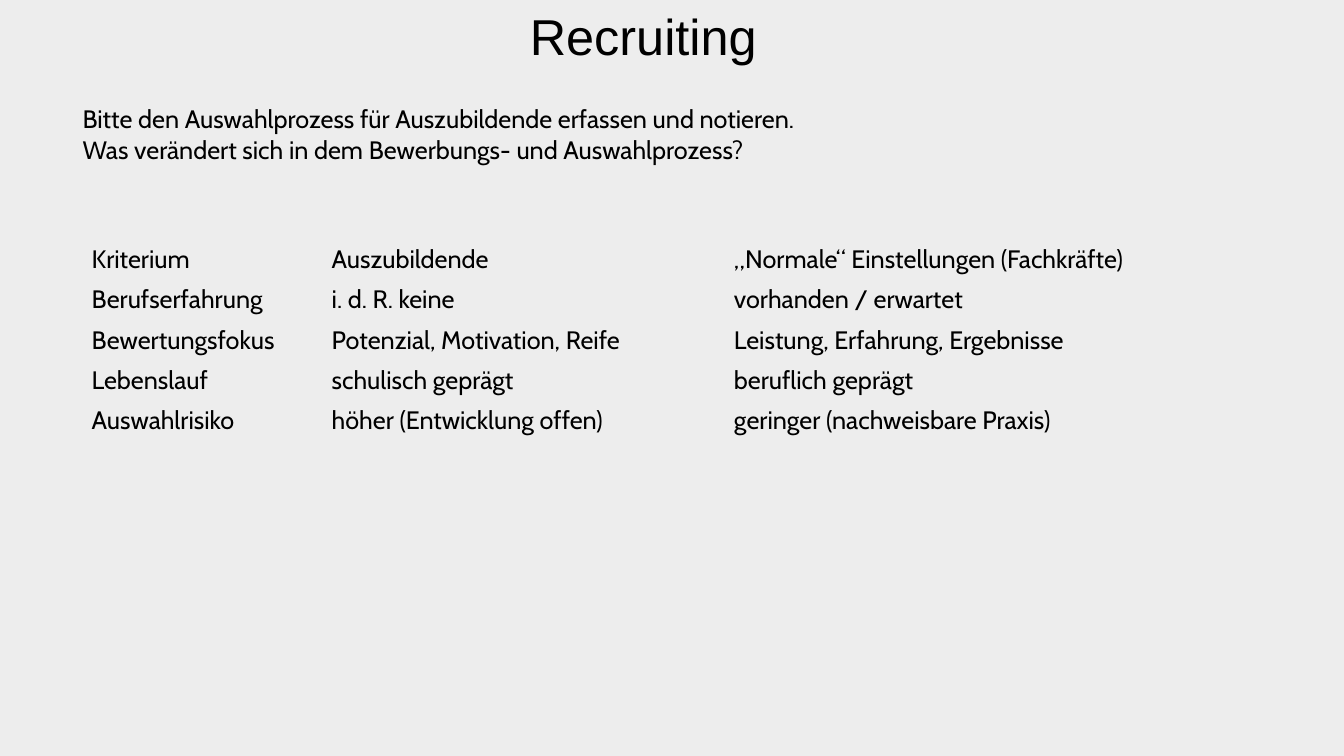
import pptx
import pptx.dml.color
import pptx.enum.text
import pptx.util

Inches = pptx.util.Inches
NO_STYLE_NO_GRID = "{2D5ABB26-0587-4C30-8999-92F81FD0307C}"
BACKGROUND, INK = "EDEDED", "000000"

QUESTIONS = [
    "Bitte den Auswahlprozess für Auszubildende erfassen und notieren.",
    "Was verändert sich in dem Bewerbungs- und Auswahlprozess?",
]
CRITERIA = [
    ("Kriterium", "Auszubildende", "„Normale“ Einstellungen (Fachkräfte)"),
    ("Berufserfahrung", "i. d. R. keine", "vorhanden / erwartet"),
    ("Bewertungsfokus", "Potenzial, Motivation, Reife", "Leistung, Erfahrung, Ergebnisse"),
    ("Lebenslauf", "schulisch geprägt", "beruflich geprägt"),
    ("Auswahlrisiko", "höher (Entwicklung offen)", "geringer (nachweisbare Praxis)"),
]


def rgb(value):
    return pptx.dml.color.RGBColor.from_string(value)


def add_run(p, text, size=18, font="Cabin"):
    r = p.add_run()
    r.text = text
    r.font.size = pptx.util.Pt(size)
    r.font.name = font
    r.font.color.rgb = rgb(INK)


def add_text(s, box, lines, align=pptx.enum.text.PP_ALIGN.LEFT, **style):
    tf = s.shapes.add_textbox(*map(Inches, box)).text_frame
    tf.word_wrap = True
    tf.auto_size = pptx.enum.text.MSO_AUTO_SIZE.SHAPE_TO_FIT_TEXT
    for i, line in enumerate(lines):
        p = tf.add_paragraph() if i else tf.paragraphs[0]
        p.alignment = align
        add_run(p, line, **style)


def add_comparison(s, box, rows, col_widths):
    frame = s.shapes.add_table(len(rows), len(col_widths), *map(Inches, box))
    table = frame.table
    table.first_row = table.horz_banding = False
    # Plain table without grid lines
    table._tbl.tblPr.find(pptx.oxml.ns.qn("a:tableStyleId")).text = NO_STYLE_NO_GRID
    for col, width in zip(table.columns, col_widths):
        col.width = Inches(width)
    for i, row in enumerate(rows):
        for j, text in enumerate(row):
            cell = table.cell(i, j)
            cell.fill.background()
            cell.vertical_anchor = pptx.enum.text.MSO_ANCHOR.MIDDLE
            add_run(cell.text_frame.paragraphs[0], text)


def main():
    prs = pptx.Presentation()
    prs.slide_width, prs.slide_height = Inches(13.33), Inches(7.5)
    s = prs.slides.add_slide(prs.slide_layouts[6])
    s.background.fill.solid()
    s.background.fill.fore_color.rgb = rgb(BACKGROUND)

    # Title
    add_text(s, (3.79, 0, 5.18, 0.71), ["Recruiting"],
             pptx.enum.text.PP_ALIGN.CENTER, size=36, font="Arial")
    # Task
    add_text(s, (0.72, 0.98, 7.91, 0.71), QUESTIONS)
    # Comparison of trainees and skilled staff
    add_comparison(s, (0.81, 2.37, 11.5, 2), CRITERIA, (2.38, 3.99, 5.13))

    prs.save("out.pptx")


if __name__ == "__main__":
    main()
